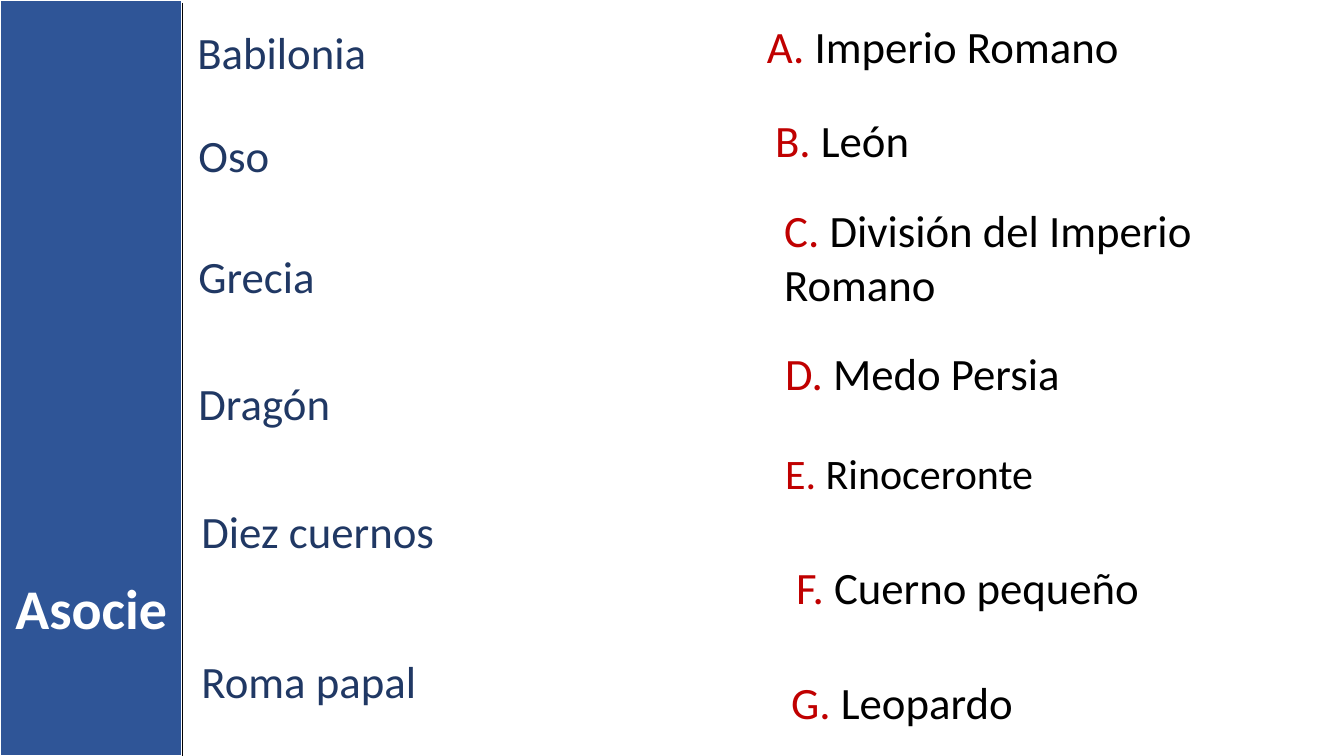
from dataclasses import dataclass

from lxml import etree
from pptx import Presentation
from pptx.dml.color import RGBColor
from pptx.enum.shapes import MSO_CONNECTOR, MSO_SHAPE
from pptx.enum.text import MSO_ANCHOR, MSO_AUTO_SIZE, PP_ALIGN
from pptx.oxml.ns import qn
from pptx.util import Pt

RECT = MSO_SHAPE.RECTANGLE
LINE = MSO_CONNECTOR.STRAIGHT
TOP = MSO_ANCHOR.TOP
FIT = MSO_AUTO_SIZE.SHAPE_TO_FIT_TEXT
CENTER = PP_ALIGN.CENTER

FONT = "Calibri"
COLORS = {"bar": "2F5597", "term": "203864", "key": "C00000",
          "text": "000000", "white": "FFFFFF"}
WIDE, HIGH = 960, 540
BAR = 130.3


@dataclass
class Item:
    text: str
    left: float
    top: float
    width: float
    key: str = ""
    size: float = 32
    lines: int = 1


TERMS = [
    Item("Babilonia", 133.9, 14.4, 368),
    Item("Oso", 134.6, 87.8, 356),
    Item("Grecia", 134.6, 174.2, 367),
    Item("Dragón", 134.6, 265, 356),
    Item("Diez cuernos", 136.8, 356.4, 343),
    Item("Roma papal", 136.8, 463.7, 343),
]
CHOICES = [
    Item("Imperio Romano", 540.7, 10.1, 363, "A. "),
    Item("León", 546.5, 77, 381, "B. "),
    Item("División del Imperio Romano", 553, 141.1, 351, "C. ", lines=2),
    Item("Medo Persia", 553.7, 243.4, 398, "D. "),
    Item("Rinoceronte", 553.7, 316.1, 381, "E. ", size=30),
    Item("Cuerno pequeño", 561.6, 396, 351, "F. "),
    Item("Leopardo", 558, 478.1, 358, "G. "),
]


def color(name: str) -> RGBColor:
    return RGBColor.from_string(COLORS[name])


def add_bar(slide) -> None:
    bar = slide.shapes.add_shape(RECT, 0, 0, Pt(BAR), Pt(HIGH))
    bar.shadow.inherit = False
    bar.fill.solid()
    bar.fill.fore_color.rgb = color("bar")
    bar.line.color.rgb = color("white")
    bar.line.width = Pt(1.5)


def add_edge(slide) -> None:
    edge = slide.shapes.add_connector(LINE, Pt(BAR), Pt(2), Pt(BAR), Pt(HIGH))
    edge.line.color.rgb = color("text")
    edge.line.width = Pt(1)
    etree.SubElement(edge.element.spPr, qn("a:effectLst"))


def set_title(slide) -> None:
    """Place the title on the bar and bring it in front."""
    title = slide.shapes.title
    title.left, title.top = Pt(0), Pt(406)
    title.width, title.height = Pt(BAR), Pt(55.4)
    frame = title.text_frame
    frame.text = "Asocie"
    frame.word_wrap = True
    frame.auto_size = FIT
    frame.vertical_anchor = TOP
    para = frame.paragraphs[0]
    para.alignment = CENTER
    para.font.name = FONT
    para.font.size = Pt(40)
    para.font.bold = True
    para.font.color.rgb = color("white")
    slide.shapes.element.append(title.element)


def add_item(slide, item: Item) -> None:
    high = item.size * 1.2 * item.lines + 7.2
    box = slide.shapes.add_textbox(Pt(item.left), Pt(item.top),
                                   Pt(item.width), Pt(high))
    frame = box.text_frame
    frame.word_wrap = True
    frame.auto_size = FIT
    para = frame.paragraphs[0]
    para.font.name = FONT
    para.font.size = Pt(item.size)
    if item.key:
        parts = [(item.key, "key"), (item.text, "text")]
    else:
        parts = [(item.text, "term")]
    for text, tone in parts:
        run = para.add_run()
        run.text = text
        run.font.color.rgb = color(tone)


def main() -> None:
    deck = Presentation()
    deck.slide_width, deck.slide_height = Pt(WIDE), Pt(HIGH)
    slide = deck.slides.add_slide(deck.slide_layouts.get_by_name("Title Only"))
    add_bar(slide)
    set_title(slide)
    add_edge(slide)
    for item in TERMS + CHOICES:
        add_item(slide, item)
    deck.save("out.pptx")


if __name__ == "__main__":
    main()
